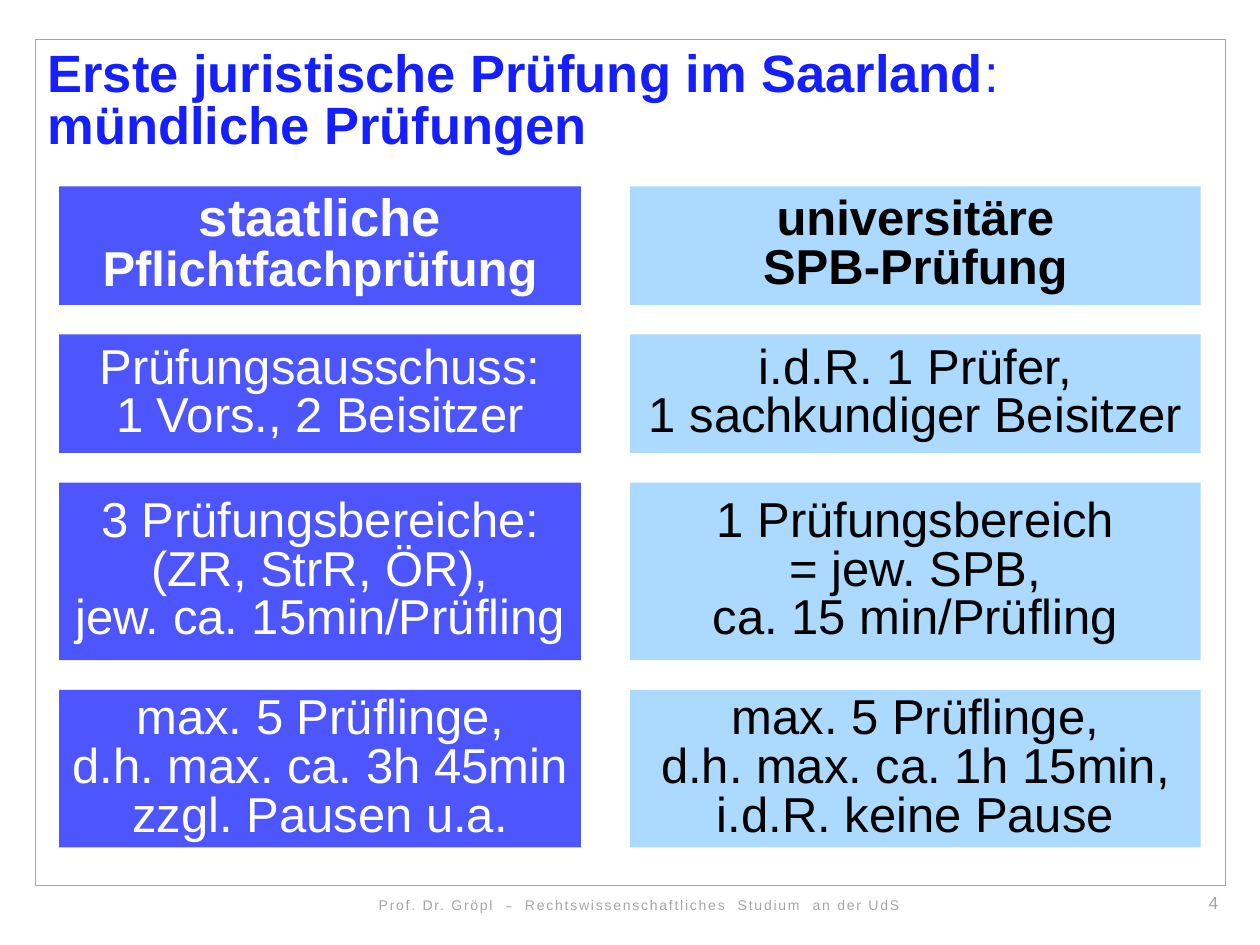
import pptx
import pptx.dml.color
import pptx.enum.shapes
import pptx.enum.text
import pptx.util

Inches = pptx.util.Inches
RGBColor = pptx.dml.color.RGBColor
Align = pptx.enum.text.PP_ALIGN
Anchor = pptx.enum.text.MSO_ANCHOR

FONT = "Arial"
TITLE_BLUE = RGBColor(0x14, 0x1F, 0xFC)
STATE_BLUE = RGBColor(0x4D, 0x55, 0xFD)
UNIVERSITY_BLUE = RGBColor(0xAC, 0xD9, 0xFE)
GRAY = RGBColor(0xA5, 0xA5, 0xA5)
WHITE = RGBColor(0xFF, 0xFF, 0xFF)
BLACK = RGBColor(0x00, 0x00, 0x00)

# left, width, fill, text colour
COLUMNS = [
    (0.47, 4.14, STATE_BLUE, WHITE),
    (5, 4.53, UNIVERSITY_BLUE, BLACK),
]
ROWS_TOP = 1.48
ROW_GAP = 0.235
ROW_HEIGHTS = [0.94, 0.94, 1.41, 1.25]
HEADINGS = [
    [("staatliche", 30), ("Pflichtfachprüfung", 28)],
    [("universitäre", 28), ("SPB-Prüfung", 28)],
]
# One entry per row below the headings, one text per column
ROW_TEXTS = [
    ("Prüfungsausschuss:\n1 Vors., 2 Beisitzer",
     "i.d.R. 1 Prüfer,\n1 sachkundiger Beisitzer"),
    ("3 Prüfungsbereiche:\n(ZR, StrR, ÖR),\njew. ca. 15min/Prüfling",
     "1 Prüfungsbereich\n= jew. SPB,\nca. 15 min/Prüfling"),
    ("max. 5 Prüflinge,\nd.h. max. ca. 3h 45min\nzzgl. Pausen u.a.",
     "max. 5 Prüflinge,\nd.h. max. ca. 1h 15min,\ni.d.R. keine Pause"),
]


def add_span(para, text, size, color, bold=False, font=FONT, tracking=None):
    """Add a run; tracking is letter spacing in points."""
    span = para.add_run()
    span.text = text
    span.font.size = pptx.util.Pt(size)
    span.font.name = font
    span.font.bold = bold
    span.font.color.rgb = color
    if tracking:
        span.font._element.set("spc", str(tracking * 100))


def set_frame(frame, margins, anchor=Anchor.TOP):
    """Set wrapping, anchor and the left, top, right and bottom margins."""
    frame.word_wrap = True
    frame.vertical_anchor = anchor
    (frame.margin_left, frame.margin_top,
     frame.margin_right, frame.margin_bottom) = map(Inches, margins)


def add_paragraph(frame, first, align=Align.LEFT, line_spacing=1.0):
    para = frame.paragraphs[0] if first else frame.add_paragraph()
    para.alignment = align
    para.line_spacing = line_spacing
    return para


def add_text_box(page, left, top, width, height, margins=(0.1, 0.05, 0.1, 0.05)):
    box = page.shapes.add_textbox(*map(Inches, (left, top, width, height)))
    set_frame(box.text_frame, margins)
    return box.text_frame


def add_rectangle(page, left, top, width, height, fill=None, line=None):
    box = page.shapes.add_shape(
        pptx.enum.shapes.MSO_SHAPE.RECTANGLE,
        *map(Inches, (left, top, width, height)))
    box.shadow.inherit = False
    if fill is None:
        box.fill.background()
    else:
        box.fill.solid()
        box.fill.fore_color.rgb = fill
    if line is None:
        box.line.fill.background()
    else:
        box.line.color.rgb = line
        box.line.width = pptx.util.Pt(0.5)
    return box


def add_page_frame(page):
    """Add the page number, border and footer."""
    number = add_text_box(page, 8.81, 7.03, 0.86, 0.27, (0.1, 0.05, 0, 0.05))
    add_span(add_paragraph(number, True, Align.RIGHT), "4", 10, GRAY)

    add_rectangle(page, 0.28, 0.31, 9.45, 6.72, line=GRAY)

    footer = add_text_box(page, 1.87, 7.07, 6.41, 0.24)
    para = add_paragraph(footer, True, Align.CENTER)
    for text, font in [
        ("Prof. Dr. Gröpl  ", FONT),
        ("–", "League Spartan"),
        ("  Rechtswissenschaftliches  Studium  an der UdS", FONT),
    ]:
        add_span(para, text, 8, GRAY, font=font, tracking=1)


def add_title(page):
    frame = add_text_box(page, 0.28, 0.32, 7.97, 0.97, (0.1, 0.08, 0.1, 0.05))
    para = add_paragraph(frame, True, line_spacing=0.83)
    add_span(para, "Erste juristische Prüfung im Saarland", 30, TITLE_BLUE, bold=True)
    add_span(para, ":", 30, TITLE_BLUE)
    para = add_paragraph(frame, False, line_spacing=0.83)
    add_span(para, "mündliche Prüfungen", 30, TITLE_BLUE, bold=True)


def add_card(page, column, top, height):
    """Add an empty filled card and return its text frame."""
    left, width, fill, _ = column
    frame = add_rectangle(page, left, top, width, height, fill=fill).text_frame
    set_frame(frame, (0.04, 0.04, 0.04, 0.04), Anchor.MIDDLE)
    return frame


def fill_heading(frame, lines, color):
    para = add_paragraph(frame, True, Align.CENTER, 0.83)
    for index, (text, size) in enumerate(lines):
        if index:
            para.add_line_break()
        add_span(para, text, size, color, bold=True)


def fill_body(frame, text, color):
    for index, line in enumerate(text.split("\n")):
        para = add_paragraph(frame, index == 0, Align.CENTER, 0.83)
        add_span(para, line, 28, color)


def add_comparison(page):
    top = ROWS_TOP
    for row, height in enumerate(ROW_HEIGHTS):
        for index, column in enumerate(COLUMNS):
            frame = add_card(page, column, top, height)
            if row == 0:
                fill_heading(frame, HEADINGS[index], column[3])
            else:
                fill_body(frame, ROW_TEXTS[row - 1][index], column[3])
        top += height + ROW_GAP


def main():
    deck = pptx.Presentation()
    deck.slide_width = Inches(10)
    deck.slide_height = Inches(7.5)
    page = deck.slides.add_slide(deck.slide_layouts[6])
    add_page_frame(page)
    add_title(page)
    add_comparison(page)
    deck.save("out.pptx")


if __name__ == "__main__":
    main()
